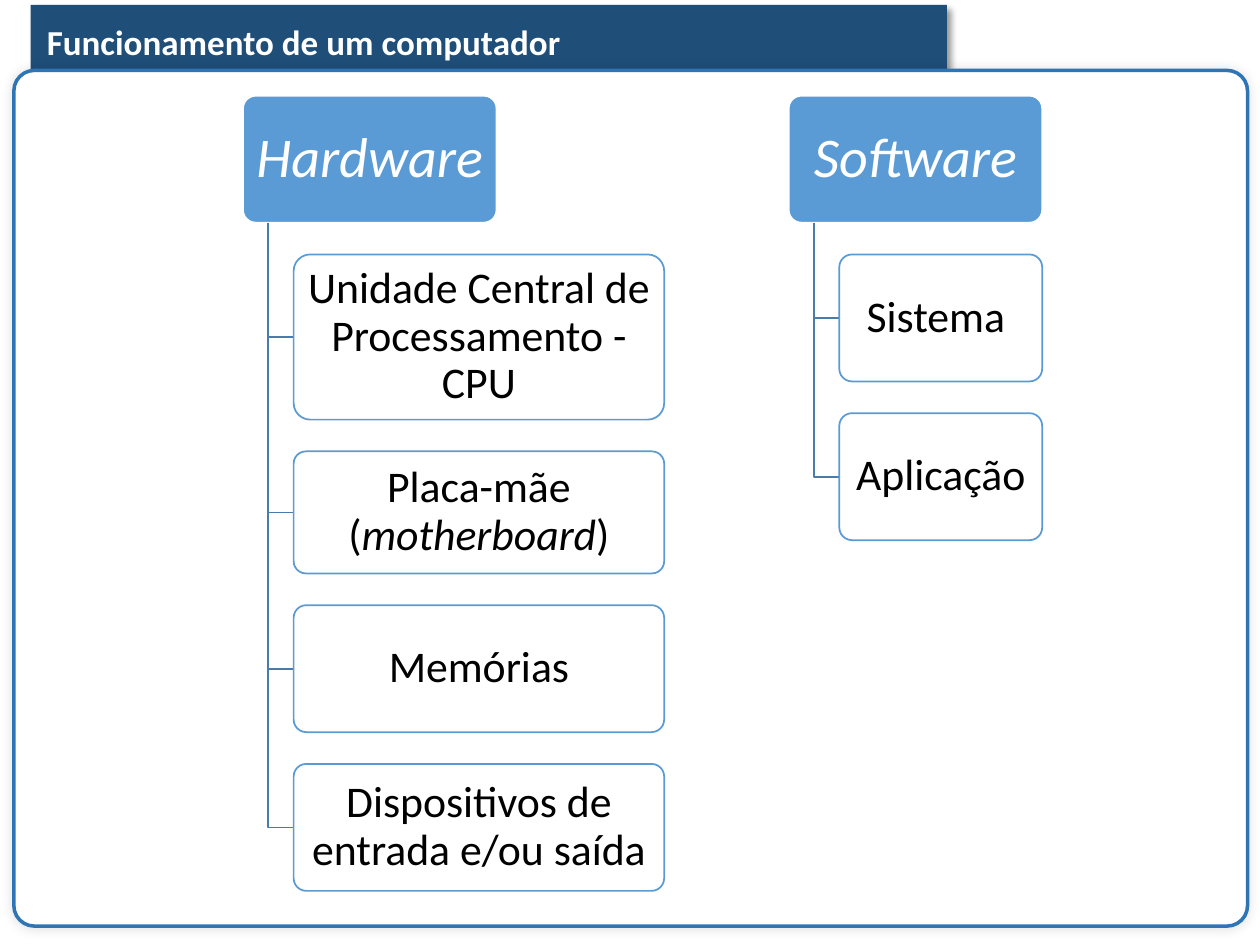
from lxml import etree
from pptx import Presentation
from pptx.dml.color import RGBColor
from pptx.enum.shapes import MSO_SHAPE as Shape
from pptx.enum.text import MSO_ANCHOR as Anchor, MSO_AUTO_SIZE as AutoSize, PP_ALIGN as Align
from pptx.oxml.ns import qn
from pptx.util import Cm, Pt

COLORS = {"banner": "1F4E79", "panel_line": "2E75B6", "header": "5B9BD5",
          "branch": "497CAB", "white": "FFFFFF", "black": "000000"}
COLORS = {name: RGBColor.from_string(value) for name, value in COLORS.items()}


def add_box(kind, left, top, width, height, fill, line, weight, corner=None):
    box = page.shapes.add_shape(kind, Cm(left), Cm(top), Cm(width), Cm(height))
    box.shadow.inherit = False
    box.fill.solid()
    box.fill.fore_color.rgb = COLORS[fill]
    if line:
        box.line.color.rgb = COLORS[line]
        box.line.width = Pt(weight)
    else:
        box.line.fill.background()
    if corner:
        box.adjustments[0] = corner
    return box


def write_text(box, spans, frame_format, para_format, font_format, color):
    frame = box.text_frame
    for name, value in frame_format.items():
        setattr(frame, name, value)
    para = frame.paragraphs[0]
    for name, value in para_format.items():
        setattr(para, name, value)
    for text, italic in spans:
        span = para.add_run()
        span.text = text
        for name, value in font_format.items():
            setattr(span.font, name, value)
        span.font.italic = italic
        span.font.color.rgb = COLORS[color]


deck = Presentation()
deck.slide_width, deck.slide_height = Cm(25.4), Cm(19.05)
page = deck.slides.add_slide(deck.slide_layouts[5])

title = page.shapes.title
title.left, title.top, title.width, title.height = Cm(0.69), Cm(0.15), Cm(19.05), Cm(1.19)
write_text(title, [("Funcionamento de um computador", False)],
           {"word_wrap": True, "auto_size": AutoSize.SHAPE_TO_FIT_TEXT,
            "vertical_anchor": Anchor.TOP},
           {"alignment": Align.LEFT, "line_spacing": Pt(28.1)},
           {"name": "Calibri", "size": Pt(20), "bold": True}, "white")

banner = add_box(Shape.RECTANGLE, 0.62, 0.1, 18.47, 1.57, "banner", None, 0)
title._element.addprevious(banner._element)
panel = add_box(Shape.ROUNDED_RECTANGLE, 0.28, 1.42, 24.87, 17.25,
                "white", "panel_line", 2, 0.024)

for box, opacity, blur, distance, angle in [(banner, 40, 4, 3, 45), (panel, 13, 6, 0, 0)]:
    effects = box._element.spPr.find(qn("a:effectLst"))
    shadow = etree.SubElement(effects, qn("a:outerShdw"), blurRad=str(Pt(blur)),
                              dist=str(Pt(distance)), dir=str(angle * 60000),
                              algn="ctr", rotWithShape="0")
    tint = etree.SubElement(shadow, qn("a:srgbClr"), val=str(COLORS["black"]))
    etree.SubElement(tint, qn("a:alpha"), val=str(opacity * 1000))

HEADER_TOP, HEADER_WIDTH, BOX_HEIGHT = 1.93, 5.11, 2.56
GAP, INDENT = 0.64, 0.51
HEADER_BOTTOM = HEADER_TOP + BOX_HEIGHT
HEADER_FRAME = {"word_wrap": True, "vertical_anchor": Anchor.MIDDLE,
                "margin_left": Cm(0.18), "margin_right": Cm(0.18),
                "margin_top": Cm(0.1), "margin_bottom": Cm(0.1)}
CHILD_FRAME = {**HEADER_FRAME, "margin_left": Cm(0.13), "margin_right": Cm(0.13),
               "margin_top": Cm(0.08), "margin_bottom": Cm(0.08)}
CENTERED = {"alignment": Align.CENTER, "line_spacing": 0.9}

branches = [
    ("Hardware", 4.9, 7.47, [
        (3.33, [("Unidade Central de Processamento - CPU", False)]),
        (2.46, [("Placa-mãe (", False), ("motherboard", True), (")", False)]),
        (BOX_HEIGHT, [("Memórias", False)]),
        (BOX_HEIGHT, [("Dispositivos de entrada e/ou saída", False)]),
    ]),
    ("Software", 15.9, 4.09, [
        (BOX_HEIGHT, [("Sistema ", False)]),
        (BOX_HEIGHT, [("Aplicação", False)]),
    ]),
]

for heading, left, child_width, children in branches:
    header = add_box(Shape.ROUNDED_RECTANGLE, left, HEADER_TOP, HEADER_WIDTH, BOX_HEIGHT,
                     "header", "white", 1, 0.1)
    write_text(header, [(heading, True)], HEADER_FRAME, CENTERED,
               {"name": "Calibri", "size": Pt(32)}, "white")
    trunk, child_left = left + INDENT, left + 2 * INDENT
    top = HEADER_BOTTOM + GAP
    for height, spans in children:
        middle = top + height / 2
        builder = page.shapes.build_freeform(Cm(trunk), Cm(HEADER_BOTTOM))
        builder.add_line_segments([(Cm(trunk), Cm(middle)), (Cm(child_left), Cm(middle))],
                                  close=False)
        elbow = builder.convert_to_shape()
        elbow.shadow.inherit = False
        elbow.fill.background()
        elbow.line.color.rgb = COLORS["branch"]
        elbow.line.width = Pt(1)

        child = add_box(Shape.ROUNDED_RECTANGLE, child_left, top, child_width, height,
                        "white", "header", 1, 0.1)
        tint = child._element.spPr.find(qn("a:solidFill")).find(qn("a:srgbClr"))
        etree.SubElement(tint, qn("a:alpha"), val="90000")
        write_text(child, spans, CHILD_FRAME, CENTERED,
                   {"name": "Calibri", "size": Pt(25)}, "black")
        top += height + GAP

deck.save("out.pptx")
